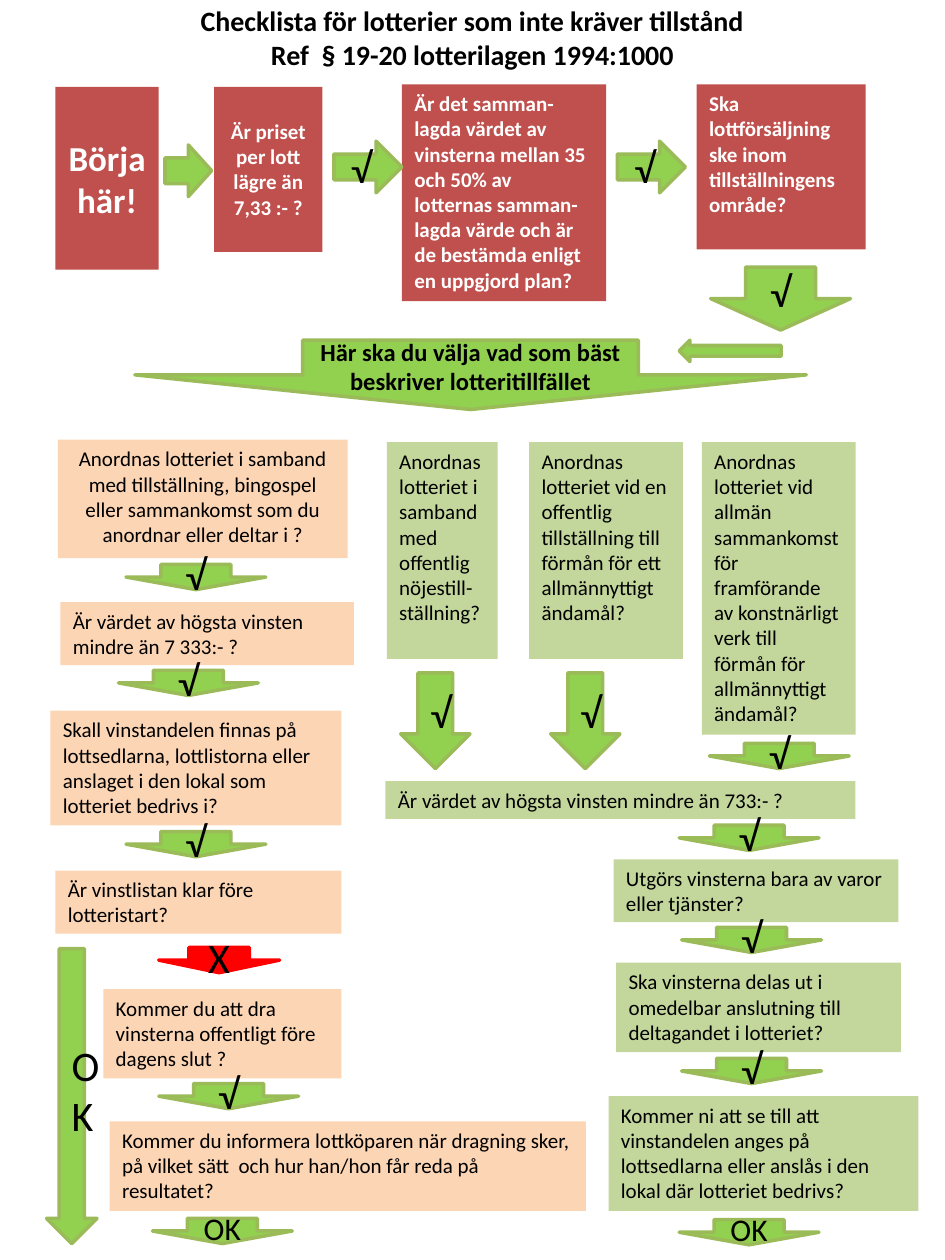
import pptx
import pptx.util
import pptx.dml.color
import pptx.enum.shapes
import pptx.enum.text

Inches, Pt = pptx.util.Inches, pptx.util.Pt
SHAPE = pptx.enum.shapes.MSO_SHAPE
ANCHOR = pptx.enum.text.MSO_ANCHOR
ALIGN = pptx.enum.text.PP_ALIGN

RED, PEACH, GREEN = "C0504D", "FCD5B5", "C3D69B"
ARROW, EDGE, STOP = "92D050", "9BBB59", "FF0000"
BLACK, WHITE = "000000", "FFFFFF"
OK_SIZE, TICK_SIZE = 18, 24

TITLE = "Checklista för lotterier som inte kräver tillstånd\vRef  § 19-20 lotterilagen 1994:1000"

START = [
    (0.44, 0.69, 0.82, 1.45, "Börja här!", {"size": 20, "align": ALIGN.CENTER, "top": 0.39}),
    (1.7, 0.69, 0.86, 1.31, "Är priset per lott lägre än 7,33 :- ?", {"align": ALIGN.CENTER, "top": 0.25}),
    (3.19, 0.67, 1.62, 1.72, "Är det samman-lagda värdet av vinsterna mellan 35 och 50% av  lotternas samman-lagda värde och är de bestämda enligt en uppgjord plan?", {}),
    (5.53, 0.67, 1.34, 1.31, "Ska lottförsäljning ske inom tillställningens område?", {}),
]
OWN_EVENT = [
    (0.46, 3.49, 2.3, 0.94, "Anordnas lotteriet i samband med tillställning, bingospel eller sammankomst som du anordnar eller deltar i ?", {"align": ALIGN.CENTER}),
    (0.48, 4.78, 2.33, 0.5, "Är värdet av högsta vinsten mindre än 7 333:- ?", {}),
    (0.4, 5.64, 2.31, 0.91, "Skall vinstandelen finnas på lottsedlarna, lottlistorna eller anslaget i den lokal som lotteriet bedrivs i?", {}),
    (0.44, 6.91, 2.27, 0.5, "Är vinstlistan klar före lotteristart?", {}),
    (0.82, 7.85, 1.89, 0.71, "Kommer du att dra vinsterna offentligt före dagens slut ?", {}),
    (0.87, 8.9, 3.78, 0.71, "Kommer du informera lottköparen när dragning sker, på vilket sätt  och hur han/hon får reda på resultatet?", {}),
]
PUBLIC_EVENT = [
    (3.07, 3.51, 0.88, 1.72, "Anordnas lotteriet i samband med offentlig nöjestill-ställning?", {}),
    (4.2, 3.51, 1.22, 1.72, "Anordnas lotteriet vid en offentlig tillställning till förmån för ett allmännyttigt ändamål?", {}),
    (5.57, 3.51, 1.22, 2.32, "Anordnas lotteriet vid allmän sammankomst för framförande av konstnärligt verk till förmån för allmännyttigt ändamål?", {}),
    (3.06, 6.2, 3.73, 0.3, "Är värdet av högsta vinsten mindre än 733:- ?", {}),
    (4.87, 6.82, 2.26, 0.5, "Utgörs vinsterna bara av varor eller tjänster?", {}),
    (4.89, 7.64, 2.26, 0.71, "Ska vinsterna delas ut i omedelbar anslutning till deltagandet i lotteriet?", {}),
    (4.83, 8.7, 2.46, 0.91, "Kommer ni att se till att vinstandelen anges på lottsedlarna eller anslås i den lokal där lotteriet bedrivs?", {}),
]

FLAT_TICKS = [(1, 4.48), (0.94, 5.32), (1, 6.6), (1.26, 8.6), (5.63, 5.9),
              (5.39, 6.55), (5.41, 7.36), (5.41, 8.4)]
FLAT_OKS = [(1.21, 9.67), (5.39, 9.68)]
TALL_TICKS = [(3.18, 5.34), (4.37, 5.34)]
RIGHT_TICKS = [(2.65, 1.12), (4.9, 1.12)]

prs = pptx.Presentation()
prs.slide_width, prs.slide_height = Inches(7.5), Inches(10)
s = prs.slides.add_slide(prs.slide_layouts[6])


def rgb(color):
    return pptx.dml.color.RGBColor.from_string(color)


def write(sp, text, size=12, color=BLACK, bold=False, align=ALIGN.LEFT, anchor=ANCHOR.TOP, top=0.05):
    tf = sp.text_frame
    frame = {"word_wrap": True, "vertical_anchor": anchor, "margin_top": Inches(top), "text": text}
    for name, value in frame.items():
        setattr(tf, name, value)
    for p in tf.paragraphs:
        p.alignment = align
        for r in p.runs:
            for name, value in {"name": "Calibri", "size": Pt(size), "bold": bold}.items():
                setattr(r.font, name, value)
            r.font.color.rgb = rgb(color)


def shape(kind, box, fill, line=None):
    sp = s.shapes.add_shape(kind, *map(Inches, box))
    sp.shadow.inherit = False
    sp.fill.solid()
    sp.fill.fore_color.rgb = rgb(fill)
    if line:
        sp.line.color.rgb = rgb(line)
        sp.line.width = Pt(2)
    else:
        sp.line.fill.background()
    return sp


def arrow(kind, box, text="", size=TICK_SIZE, bold=False, fill=ARROW, line=EDGE):
    sp = shape(kind, box, fill, line)
    if text:
        write(sp, text, size, bold=bold, align=ALIGN.CENTER, anchor=ANCHOR.MIDDLE)


title = s.shapes.add_textbox(*map(Inches, (0, 0.03, 7.5, 0.53)))
write(title, TITLE, 16, bold=True, align=ALIGN.CENTER, anchor=ANCHOR.MIDDLE)

for boxes, fill, look in [
    (START, RED, {"color": WHITE, "bold": True}),
    (OWN_EVENT, PEACH, {}),
    (PUBLIC_EVENT, GREEN, {}),
]:
    for *box, text, extra in boxes:
        write(shape(SHAPE.RECTANGLE, box, fill), text, **look, **extra)

for kind, places, size, text, points in [
    (SHAPE.RIGHT_ARROW, RIGHT_TICKS, (0.54, 0.41), "√", TICK_SIZE),
    (SHAPE.DOWN_ARROW, FLAT_TICKS, (1.11, 0.2), "√", TICK_SIZE),
    (SHAPE.DOWN_ARROW, FLAT_OKS, (1.11, 0.2), "OK", OK_SIZE),
    (SHAPE.DOWN_ARROW, TALL_TICKS, (0.55, 0.76), "√", TICK_SIZE),
]:
    for place in places:
        arrow(kind, place + size, text, points)

arrow(SHAPE.RIGHT_ARROW, (1.31, 1.15, 0.37, 0.41))
arrow(SHAPE.DOWN_ARROW, (5.64, 2.12, 1.11, 0.5), "√")
arrow(SHAPE.DOWN_ARROW, (1.07, 2.7, 5.33, 0.55),
      "Här ska du välja vad som bäst\nbeskriver lotteritillfället", 14, bold=True)
arrow(SHAPE.LEFT_ARROW, (5.39, 2.7, 0.81, 0.17))
arrow(SHAPE.DOWN_ARROW, (0.37, 7.53, 0.4, 2.34), "OK")
arrow(SHAPE.DOWN_ARROW, (1.26, 7.52, 0.96, 0.2), "X", fill=STOP, line=STOP)

prs.save("out.pptx")
